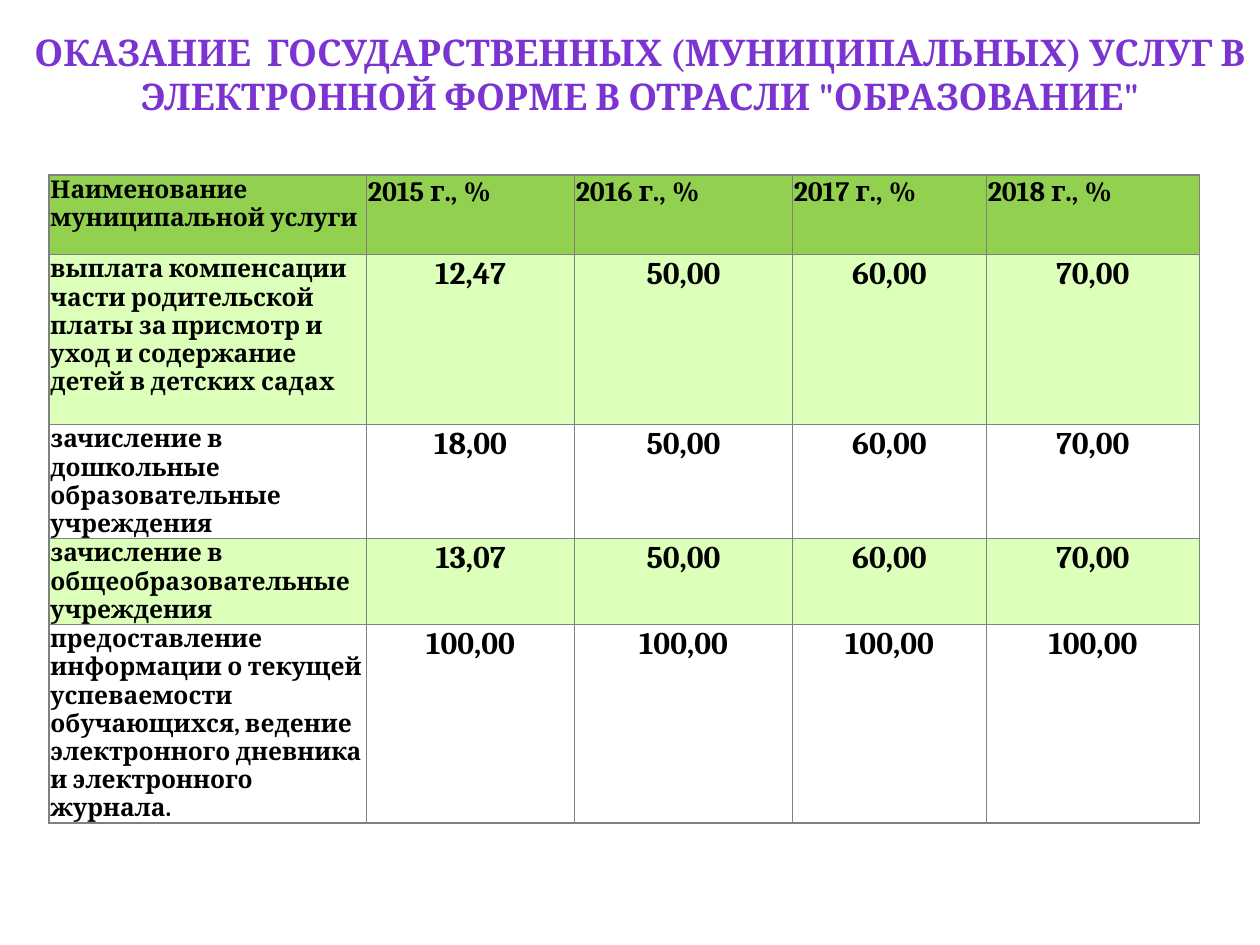
from lxml import etree
from pptx import Presentation
from pptx import util as u
from pptx.dml.color import RGBColor
from pptx.enum import text
from pptx.oxml import ns

FONT = "Cambria"
PURPLE = RGBColor(0x7B, 0x34, 0xD2)
BLACK = RGBColor(0, 0, 0)
GRAY = RGBColor(0x80, 0x80, 0x80)
HEADER_GREEN = RGBColor(0x92, 0xD0, 0x50)
PALE_GREEN = RGBColor(0xDC, 0xFF, 0xB9)
WHITE = RGBColor(0xFF, 0xFF, 0xFF)

TITLE = 'ОКАЗАНИЕ  ГОСУДАРСТВЕННЫХ (МУНИЦИПАЛЬНЫХ) УСЛУГ В ЭЛЕКТРОННОЙ ФОРМЕ В ОТРАСЛИ "ОБРАЗОВАНИЕ"'
COLUMN_WIDTHS = [2.52, 1.65, 1.73, 1.54, 1.69]
ROW_HEIGHTS = [0.63, 1.35, 0.9, 0.68, 1.57]
ROWS = [
    ["Наименование муниципальной услуги"] + [f"{year} г., %" for year in range(2015, 2019)],
    ["выплата компенсации части родительской платы за присмотр и уход и содержание детей в детских садах",
     "12,47", "50,00", "60,00", "70,00"],
    ["зачисление в дошкольные образовательные учреждения",
     "18,00", "50,00", "60,00", "70,00"],
    ["зачисление в общеобразовательные учреждения",
     "13,07", "50,00", "60,00", "70,00"],
    ["предоставление информации о текущей успеваемости обучающихся, "
     "ведение электронного дневника и электронного журнала.",
     "100,00", "100,00", "100,00", "100,00"],
]


def style_paragraph(paragraph, size, color, alignment):
    paragraph.alignment = alignment
    font = paragraph.font
    font.name, font.size, font.bold = FONT, u.Pt(size), True
    font.color.rgb = color


def add_title(slide, left, top, width, height):
    box = slide.shapes.add_textbox(*map(u.Inches, (left, top, width, height)))
    frame = box.text_frame
    frame.word_wrap = True
    frame.vertical_anchor = text.MSO_ANCHOR.MIDDLE
    frame.margin_bottom = u.Inches(0.39)  # lifts the two lines above the box centre
    frame.text = TITLE
    style_paragraph(frame.paragraphs[0], 21, PURPLE, text.PP_ALIGN.CENTER)


def add_borders(cell):
    properties = cell._tc.get_or_add_tcPr()
    for position, side in enumerate(("lnL", "lnR", "lnT", "lnB")):
        line = etree.Element(ns.qn(f"a:{side}"), w=str(u.Pt(1)))
        fill = etree.SubElement(line, ns.qn("a:solidFill"))
        etree.SubElement(fill, ns.qn("a:srgbClr"), val=str(GRAY))
        properties.insert(position, line)


def fill_cell(cell, row, column):
    cell.text = ROWS[row][column]
    cell.margin_left = cell.margin_right = cell.margin_top = u.Inches(0.01)
    cell.margin_bottom = 0
    cell.fill.solid()
    cell.fill.fore_color.rgb = HEADER_GREEN if row == 0 else (WHITE, PALE_GREEN)[row % 2]
    add_borders(cell)
    is_value = row > 0 and column > 0
    size = 14 if column == 0 else 18 if is_value else 16
    alignment = text.PP_ALIGN.CENTER if is_value else text.PP_ALIGN.LEFT
    style_paragraph(cell.text_frame.paragraphs[0], size, BLACK, alignment)


def add_services_table(slide, left, top):
    box = map(u.Inches, (left, top, sum(COLUMN_WIDTHS), sum(ROW_HEIGHTS)))
    table = slide.shapes.add_table(len(ROWS), len(COLUMN_WIDTHS), *box).table
    for column, width in zip(table.columns, COLUMN_WIDTHS):
        column.width = u.Inches(width)
    for row, height in enumerate(ROW_HEIGHTS):
        table.rows[row].height = u.Inches(height)
        for column in range(len(COLUMN_WIDTHS)):
            fill_cell(table.cell(row, column), row, column)


def main():
    presentation = Presentation()
    presentation.slide_width, presentation.slide_height = u.Inches(10), u.Inches(7.5)
    slide = presentation.slides.add_slide(presentation.slide_layouts[6])
    add_services_table(slide, 0.39, 1.39)
    add_title(slide, -0.02, 0.44, 10.2, 0.63)
    presentation.save("out.pptx")


if __name__ == "__main__":
    main()
